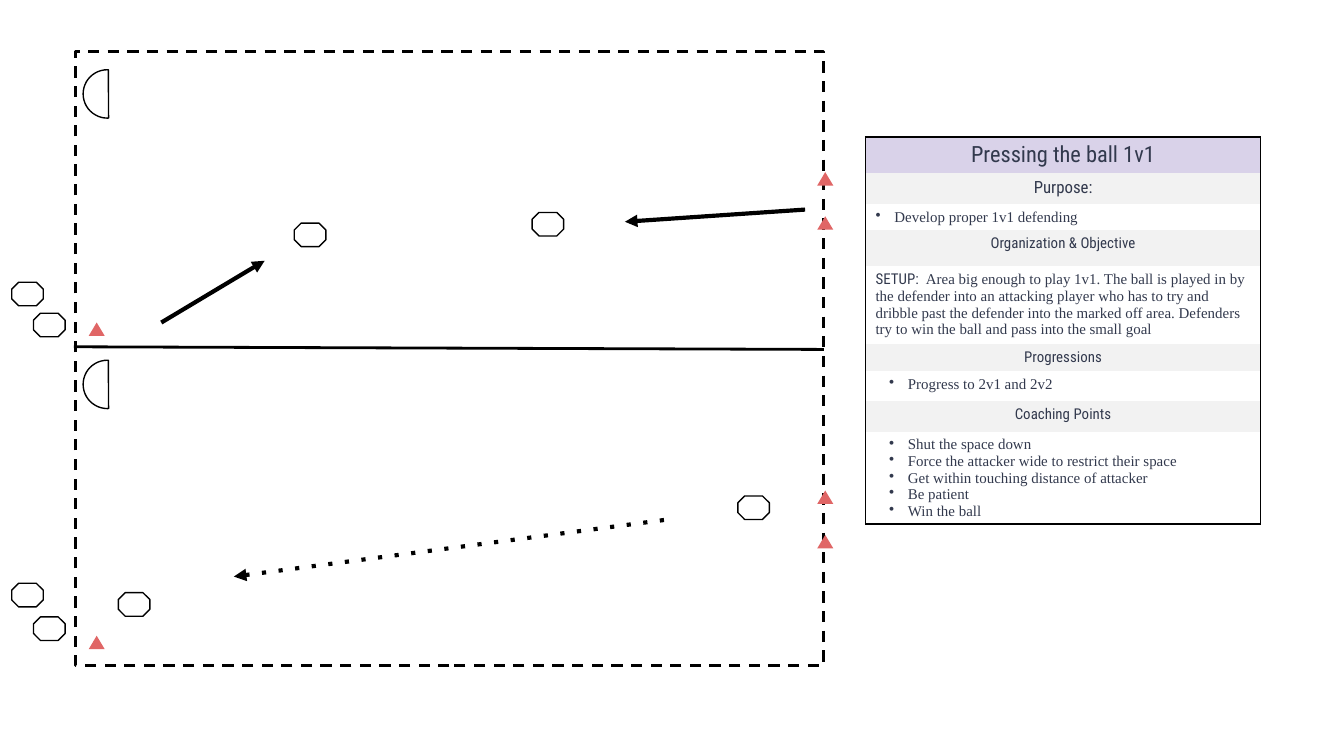
from lxml import etree
from pptx import Presentation
from pptx.dml.color import RGBColor
from pptx.enum import dml, shapes, text
from pptx.oxml.ns import qn
from pptx.util import Pt

BLACK = RGBColor(0x00, 0x00, 0x00)
WHITE = RGBColor(0xFF, 0xFF, 0xFF)
CONE_RED = RGBColor(0xE0, 0x66, 0x66)
LAVENDER = RGBColor(0xD9, 0xD2, 0xE9)
LIGHT_GREY = RGBColor(0xF2, 0xF2, 0xF2)
SLATE = RGBColor(0x32, 0x39, 0x4D)
HEADING_FONT = "Roboto Condensed"
BODY_FONT = "Times New Roman"

CONES = [(47.5, 340.6), (47.5, 172.8)] + [
    (437.8, top) for top in (286.6, 262.8, 115.9, 92.2)]
PLAYERS = [(157.7, 119.5), (63.4, 317.5), (18, 330.5), (6.3, 312.5),
           (18, 167.8), (6.3, 151.2), (395.3, 265.7), (285.1, 113.8)]
GOALS = [(44.6, 37.4), (44.6, 193)]

SETUP = ("Area big enough to play 1v1. The ball is played in by the defender "
         "into an attacking player who has to try and dribble past the defender "
         "into the marked off area. Defenders try to win the ball and pass into "
         "the small goal")
COACHING_POINTS = ["Shut the space down",
                   "Force the attacker wide to restrict their space",
                   "Get within touching distance of attacker",
                   "Be patient", "Win the ball"]


def add_marker(slide, kind, left, top, width, height, fill=None, outline=None):
    marker = slide.shapes.add_shape(kind, Pt(left), Pt(top), Pt(width), Pt(height))
    marker.shadow.inherit = False
    if fill is None:
        marker.fill.background()
    else:
        marker.fill.solid()
        marker.fill.fore_color.rgb = fill
    if outline is None:
        marker.line.fill.background()
    else:
        marker.line.color.rgb = BLACK
        marker.line.width = Pt(outline)
    return marker


def add_line(slide, start, end, width, dash=None, arrow=False):
    line = slide.shapes.add_connector(
        shapes.MSO_CONNECTOR.STRAIGHT, *(Pt(v) for v in start + end))
    line.line.color.rgb = BLACK
    line.line.width = Pt(width)
    outline = line.line._get_or_add_ln()
    if dash:
        etree.SubElement(outline, qn("a:prstDash"), val=dash)
    if arrow:
        etree.SubElement(outline, qn("a:tailEnd"), type="triangle")
    etree.SubElement(line._element.spPr, qn("a:effectLst"))


def set_borders(cell, visible):
    """Draw the sides named in visible (of L, R, T, B) and hide the others."""
    properties = cell._tc.get_or_add_tcPr()
    for side in "LRTB":
        border = etree.SubElement(properties, qn(f"a:ln{side}"), w=str(Pt(0.75)))
        if side in visible:
            fill = etree.SubElement(border, qn("a:solidFill"))
            etree.SubElement(fill, qn("a:srgbClr"), val=str(BLACK))
        else:
            etree.SubElement(border, qn("a:noFill"))


def add_run(paragraph, wording, font, size):
    run = paragraph.add_run()
    run.text = wording
    run.font.name = font
    run.font.size = Pt(size)
    run.font.color.rgb = SLATE


def write_heading(cell, wording, size=8):
    paragraph = cell.text_frame.paragraphs[0]
    paragraph.alignment = text.PP_ALIGN.CENTER
    add_run(paragraph, wording, HEADING_FONT, size)


def write_setup(cell):
    paragraph = cell.text_frame.paragraphs[0]
    add_run(paragraph, "SETUP:  ", HEADING_FONT, 8)
    add_run(paragraph, SETUP, BODY_FONT, 8)


def write_bullets(cell, points, margin):
    frame = cell.text_frame
    for index, point in enumerate(points):
        paragraph = frame.add_paragraph() if index else frame.paragraphs[0]
        properties = paragraph._p.get_or_add_pPr()
        properties.set("marL", str(Pt(margin)))
        properties.set("indent", str(-Pt(10.1)))
        colour = etree.SubElement(properties, qn("a:buClr"))
        etree.SubElement(colour, qn("a:srgbClr"), val=str(SLATE))
        etree.SubElement(properties, qn("a:buChar"), char="•")
        add_run(paragraph, point, BODY_FONT, 8)


def add_session_plan(slide):
    heights = [19.3, 16.6, 14, 19.3, 41.8, 14.5, 16, 16.6, 49.3]
    fills = [LAVENDER] + [LIGHT_GREY, WHITE] * 4
    plan = slide.shapes.add_table(
        len(heights), 1, Pt(463.7), Pt(73.4), Pt(211.7), Pt(sum(heights))).table
    plan.first_row = plan.horz_banding = False
    cells = [row.cells[0] for row in plan.rows]
    for index, cell in enumerate(cells):
        plan.rows[index].height = Pt(heights[index])
        cell.margin_left = cell.margin_right = Pt(5.4)
        cell.margin_top = cell.margin_bottom = Pt(2.5)
        edge = {0: "T", len(cells) - 1: "B"}.get(index, "")
        set_borders(cell, "LR" + edge)
        cell.fill.solid()
        cell.fill.fore_color.rgb = fills[index]

    title, purpose, aim, organization, setup, progress, steps, coaching, tips = cells
    write_heading(title, "Pressing the ball 1v1", 12)
    write_heading(purpose, "Purpose:", 9)
    write_bullets(aim, ["Develop proper 1v1 defending"], 10.1)
    write_heading(organization, "Organization & Objective")
    write_setup(setup)
    write_heading(progress, "Progressions")
    write_bullets(steps, ["Progress to 2v1 and 2v2"], 17.3)
    write_heading(coaching, "Coaching Points")
    write_bullets(tips, COACHING_POINTS, 17.3)


def add_field(slide):
    kinds = shapes.MSO_SHAPE
    pitch = add_marker(slide, kinds.RECTANGLE, 40.3, 27.4, 401, 329, outline=1.5)
    pitch.line.dash_style = dml.MSO_LINE.DASH
    add_line(slide, (39.6, 185.8), (441.4, 187.2), 1.5)
    for left, top in GOALS:
        goal = add_marker(slide, kinds.CHORD, left, top, 25.9, 25.9, WHITE, 0.75)
        goal.adjustments[0] = 52.197
        goal.adjustments[1] = 163.411
    for left, top in PLAYERS:
        add_marker(slide, kinds.OCTAGON, left, top, 16.9, 12.6, WHITE, 0.75)
    for left, top in CONES:
        add_marker(slide, kinds.ISOSCELES_TRIANGLE, left, top, 8.6, 7.2, CONE_RED)


def add_movements(slide):
    add_line(slide, (355.7, 278.6), (125.3, 308.9), 2.25, dash="dot", arrow=True)
    add_line(slide, (86.4, 172.8), (141.8, 139.7), 2.25, arrow=True)
    add_line(slide, (431.3, 112.3), (334.8, 118.8), 2.25, arrow=True)


def main():
    deck = Presentation()
    deck.slide_width, deck.slide_height = Pt(720), Pt(405)
    slide = deck.slides.add_slide(deck.slide_layouts[6])
    add_session_plan(slide)
    add_field(slide)
    add_movements(slide)
    deck.save("out.pptx")


if __name__ == "__main__":
    main()
